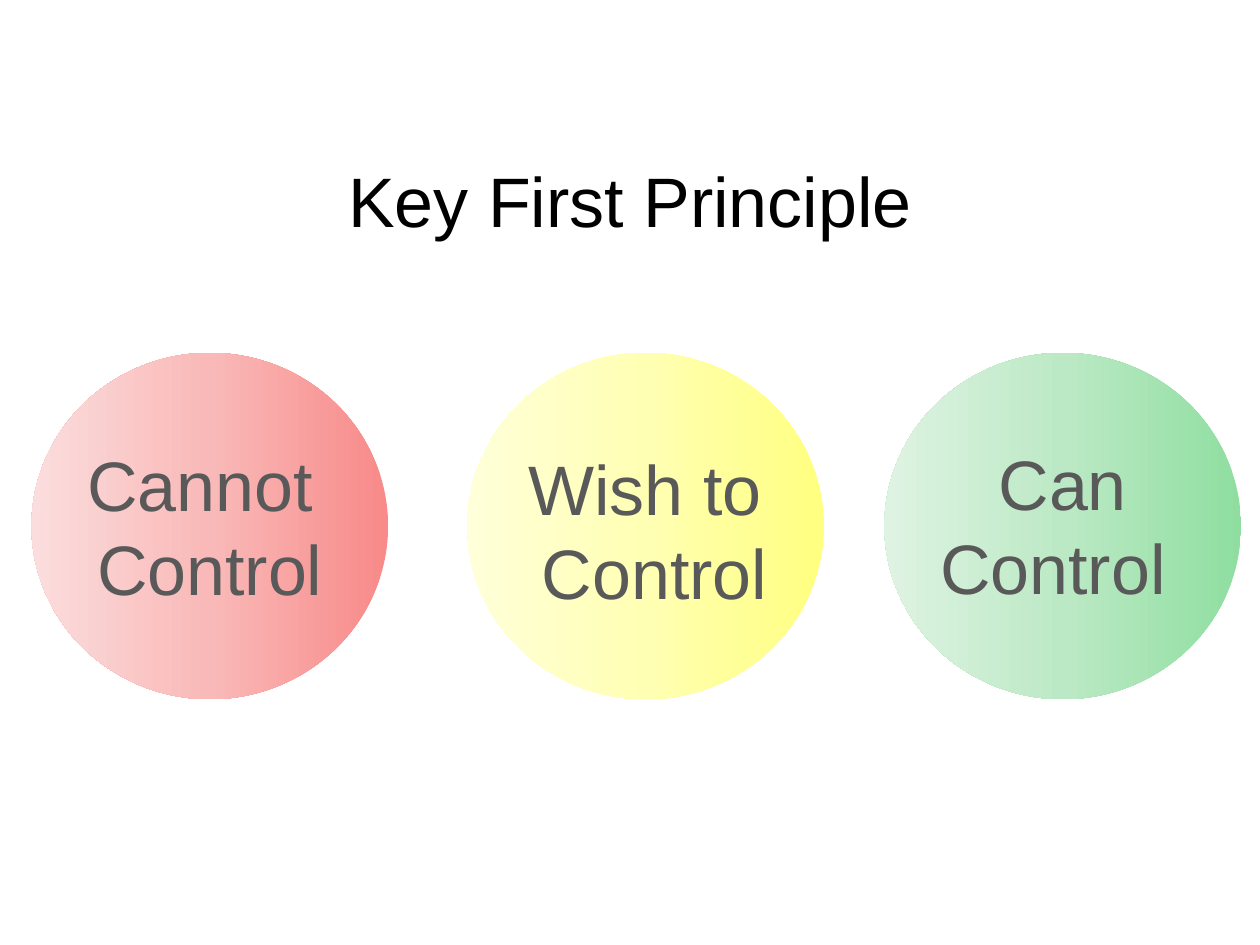
from copy import deepcopy
from dataclasses import dataclass

from pptx import Presentation
from pptx.dml.color import RGBColor
from pptx.enum.shapes import MSO_SHAPE
from pptx.enum.text import MSO_ANCHOR, MSO_AUTO_SIZE, PP_ALIGN
from pptx.oxml.ns import qn
from pptx.slide import Slide
from pptx.text.text import TextFrame
from pptx.util import Pt

CIRCLE_TOP = 201.6
CIRCLE_WIDTH = 203.8
CIRCLE_HEIGHT = 198
LABEL_HEIGHT = 104.4


@dataclass
class Zone:
    circle_left: float
    gradient: tuple[str, str, str]
    label_left: float
    label_top: float
    label_width: float
    lines: tuple[str, str]


ZONES = [
    Zone(18, ("F88A89", "F9B9B8", "FBDDDD"), 41.8, 246.2, 156.2, ("Cannot ", "Control")),
    Zone(267.1, ("FFFF80", "FFFFB3", "FFFFDA"), 293.8, 248.4, 160.6, ("Wish to ", "Control")),
    Zone(505.4, ("8FDEA0", "BCE9C5", "DFF3E3"), 529.2, 245.5, 156.2, ("Can", "Control ")),
]


def color(value: str) -> RGBColor:
    return RGBColor.from_string(value)


def write_lines(frame: TextFrame, lines: tuple[str, ...], text_color: str) -> None:
    frame.vertical_anchor = MSO_ANCHOR.TOP
    frame.margin_top = Pt(6)
    frame.margin_bottom = Pt(2.4)
    for index, line in enumerate(lines):
        para = frame.paragraphs[0] if index == 0 else frame.add_paragraph()
        para.alignment = PP_ALIGN.CENTER
        para.line_spacing = Pt(48)
        para.space_before = Pt(0)
        span = para.add_run()
        span.text = line
        span.font.name = "Arial"
        span.font.size = Pt(40)
        span.font.color.rgb = color(text_color)


def draw_title(page: Slide) -> None:
    title = page.shapes.title
    title.left, title.top = Pt(36), Pt(84)
    title.width, title.height = Pt(648), Pt(78)
    title.text_frame.auto_size = MSO_AUTO_SIZE.NONE
    write_lines(title.text_frame, ("Key First Principle",), "000000")


def draw_circle(page: Slide, zone: Zone) -> None:
    circle = page.shapes.add_shape(
        MSO_SHAPE.OVAL, Pt(zone.circle_left), Pt(CIRCLE_TOP), Pt(CIRCLE_WIDTH), Pt(CIRCLE_HEIGHT)
    )
    circle.shadow.inherit = False
    circle.line.fill.background()
    circle.fill.gradient()
    circle.fill.gradient_angle = 180
    stop_list = next(circle._element.spPr.iter(qn("a:gsLst")))
    stop_list.insert(1, deepcopy(stop_list[0]))
    for index, stop in enumerate(circle.fill.gradient_stops):
        stop.position = index / 2
        stop.color.rgb = color(zone.gradient[index])


def draw_label(page: Slide, zone: Zone) -> None:
    box = page.shapes.add_textbox(
        Pt(zone.label_left), Pt(zone.label_top), Pt(zone.label_width), Pt(LABEL_HEIGHT)
    )
    box.text_frame.word_wrap = False
    box.text_frame.auto_size = MSO_AUTO_SIZE.SHAPE_TO_FIT_TEXT
    write_lines(box.text_frame, zone.lines, "595959")


def main() -> None:
    deck = Presentation()
    deck.slide_width, deck.slide_height = Pt(720), Pt(540)
    page = deck.slides.add_slide(deck.slide_layouts.get_by_name("Title Only"))
    page.background.fill.solid()
    page.background.fill.fore_color.rgb = color("FFFFFF")
    draw_title(page)
    for zone in ZONES:
        draw_circle(page, zone)
    for zone in ZONES:
        draw_label(page, zone)
    deck.save("out.pptx")


if __name__ == "__main__":
    main()
